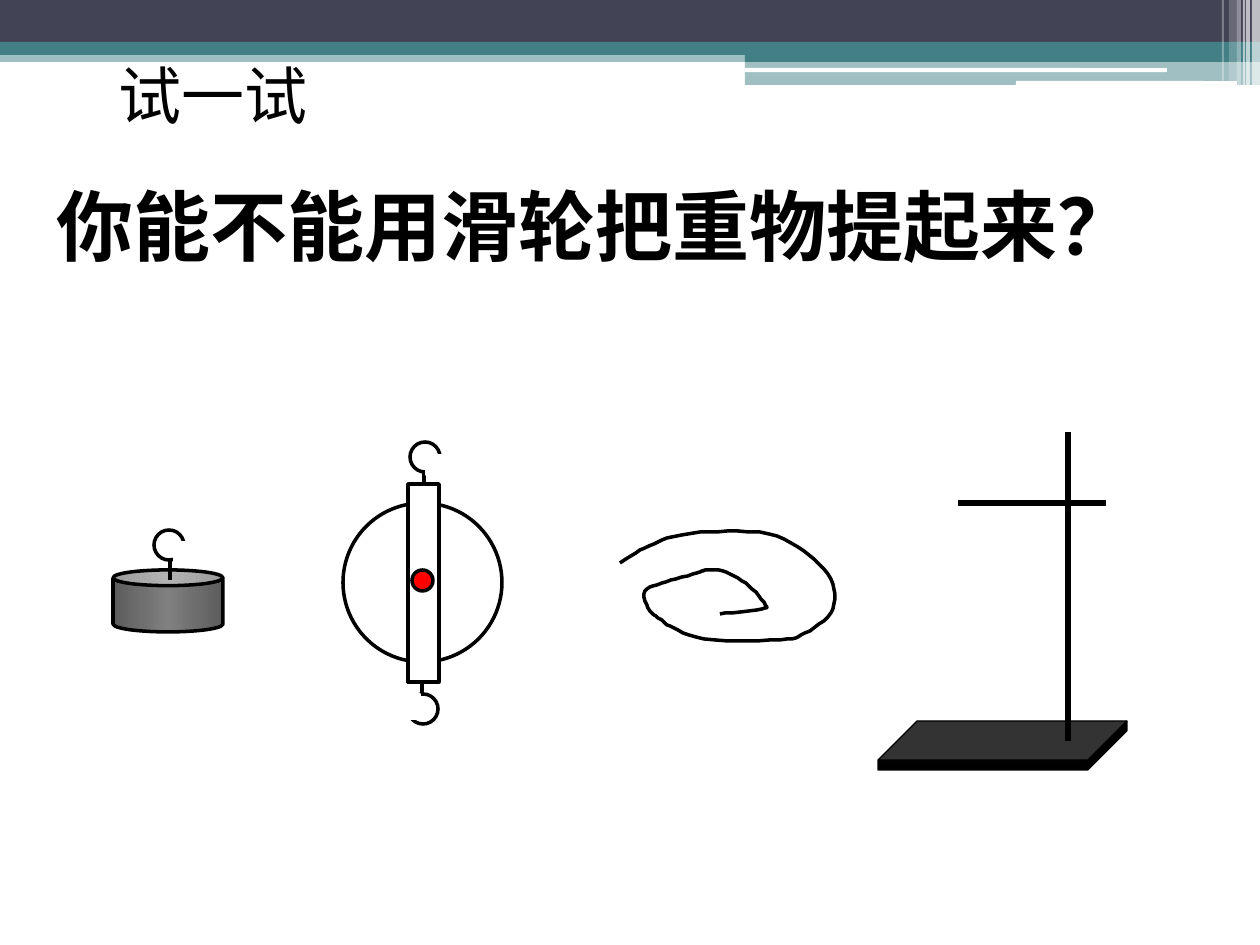
import copy

import pptx
import pptx.dml.color
import pptx.enum.dml
import pptx.enum.shapes
import pptx.enum.text
import pptx.oxml
import pptx.oxml.ns
import pptx.util

PX = 914400 // 126
COLORS = {
    "navy": "424456", "teal": "438086", "white": "FFFFFF", "black": "000000",
    "red": "FF0000", "metal_dark": "5C5C5C", "metal_light": "808080",
}
KIND = pptx.enum.shapes.MSO_SHAPE
TEXT = pptx.enum.text
qn = pptx.oxml.ns.qn


def rgb(name):
    return pptx.dml.color.RGBColor.from_string(COLORS[name])


def element(parent, tag, **attributes):
    child = parent.makeelement(qn(tag), attributes)
    parent.append(child)
    return child


def set_line(shape, color, width):
    shape.line.color.rgb = rgb(color)
    shape.line.width = pptx.util.Pt(width)


def add_part(parts, kind, box, fill, line=None, width=2, opacity=100):
    shape = parts.add_shape(kind, *(PX * length for length in box))
    shape.shadow.inherit = False
    shape.fill.solid()
    shape.fill.fore_color.rgb = rgb(fill)
    if opacity < 100:
        color = shape._element.spPr.find(qn("a:solidFill"))[0]
        element(color, "a:alpha", val=str(opacity * 1000))
    if line:
        set_line(shape, line, width)
    else:
        shape.line.fill.background()
    return shape


def add_rod(parts, x1, y1, x2, y2, width=2):
    rod = parts.add_connector(
        pptx.enum.shapes.MSO_CONNECTOR.STRAIGHT,
        *(PX * length for length in (x1, y1, x2, y2)))
    set_line(rod, "black", width)
    element(rod._element.spPr, "a:effectLst")


def add_hook(parts, x, y, stem, gap):
    """Ring at x, y with a stem (x, top, bottom) and a white gap, all relative."""
    stem_x, top, bottom = stem
    add_rod(parts, x + stem_x, y + top, x + stem_x, y + bottom)
    add_part(parts, KIND.OVAL, (x, y, 30, 30), "white", "black")
    left, top, width, height = gap
    add_part(parts, KIND.RECTANGLE, (x + left, y + top, width, height),
             "white", "white", 0.75)


def add_header(parts, x, y, width):
    right = x + width
    panel = x + 745
    bars = [
        (x, y + 50, width, 12, "teal", 50),
        (x, y, width, 42, "navy", 100),
        (x, y + 42, width, 13, "teal", 100),
        (panel, y + 49, right - panel, 13, "teal", 100),
        (panel, y + 61, right - panel, 24, "teal", 50),
    ]
    for *box, color, opacity in bars:
        add_part(parts, KIND.RECTANGLE, box, color, opacity=opacity)
    for box in ((panel, y + 68, 422, 4), (x + 1016, y + 81, 221, 5)):
        add_part(parts, KIND.ROUNDED_RECTANGLE, box, "white")
    # Stripes: distance from the right edge, width, height, opacity
    for offset, thick, tall, opacity in (
            (8, 8, 86, 65), (14, 4, 86, 65), (17, 2, 86, 60),
            (23, 4, 86, 40), (31, 8, 81, 20), (38, 2, 81, 30)):
        add_part(parts, KIND.RECTANGLE, (right - offset, y, thick, tall),
                 "white", opacity=opacity)


def fill_placeholder(holder, box, text, size, latin, bold, align, anchor, spacing):
    holder.left, holder.top, holder.width, holder.height = (PX * n for n in box)
    frame = holder.text_frame
    frame.text = text
    frame.word_wrap = True
    frame.auto_size = TEXT.MSO_AUTO_SIZE.NONE
    frame.vertical_anchor = anchor
    para = frame.paragraphs[0]
    para.alignment = align
    para.line_spacing = spacing
    para.space_before = pptx.util.Pt(0)
    properties = para._p.get_or_add_pPr()
    properties.set("marL", "0")
    properties.set("indent", "0")
    element(properties, "a:buNone")
    span = para.runs[0]
    span.font.size = pptx.util.Pt(size)
    span.font.bold = bold
    span.font.name = latin
    span.font.color.rgb = rgb("black")
    element(span._r.get_or_add_rPr(), "a:ea", typeface="Noto Sans CJK SC")


def add_weight(parts, x, y):
    can = add_part(parts, KIND.CAN, (x, y + 40, 110, 62), "metal_dark", "black")
    can.adjustments[0] = 0.254
    can.fill.gradient()
    can.fill.gradient_angle = 0
    for stop, position in zip(can.fill.gradient_stops, (0, 1)):
        stop.color.rgb = rgb("metal_dark")
        stop.position = position
    # A lighter stop in the middle
    stops = can._element.spPr.find(qn("a:gradFill")).find(qn("a:gsLst"))
    stops.insert(1, copy.deepcopy(stops[0]))
    middle = can.fill.gradient_stops[1]
    middle.color.rgb = rgb("metal_light")
    middle.position = 0.5
    add_hook(parts, x + 41, y, (16, 11, 50), (20, 12, 39, 20))


def add_pulley(page, x, y):
    parts = page.shapes.add_group_shape().shapes
    add_part(parts, KIND.OVAL, (x, y + 61, 159, 159), "white", "black")
    add_part(parts, KIND.RECTANGLE, (x + 65, y + 42, 31, 198), "white", "black")
    add_part(parts, KIND.OVAL, (x + 69, y + 128, 21, 21), "red", "black")
    add_hook(parts, x + 67, y, (14, 20, 41), (16, 13, 39, 20))
    add_hook(parts, x + 65, y + 252, (14, -14, 17), (-27, 0, 39, 25))


def smooth_curve(points, steps=6):
    """Catmull-Rom curve through the points."""
    padded = [points[0], *points, points[-1]]
    curve = [points[0]]
    for a, b, c, d in zip(padded, padded[1:], padded[2:], padded[3:]):
        for step in range(1, steps + 1):
            t = step / steps
            curve.append(tuple(
                (2 * q + (r - p) * t + (2 * p - 5 * q + 4 * r - s) * t ** 2
                 + (3 * q - p - 3 * r + s) * t ** 3) / 2
                for p, q, r, s in zip(a, b, c, d)))
    return curve


def add_rope(parts, x, y):
    knots = [(0, 31), (25, 16), (52, 5), (88, 0), (149, 2), (189, 23),
             (213, 52), (211, 81), (185, 101), (160, 108), (84, 107),
             (50, 94), (42, 88), (30, 79), (25, 59), (46, 50), (77, 41),
             (88, 38), (106, 40), (129, 54), (145, 72), (142, 77), (100, 82)]
    start, *rest = [(x + a, y + b) for a, b in smooth_curve(knots)]
    builder = parts.build_freeform(*start, scale=PX)
    builder.add_line_segments(rest, close=False)
    rope = builder.convert_to_shape()
    rope.shadow.inherit = False
    rope.fill.background()
    set_line(rope, "black", 2)


def add_stand(parts, x, y):
    add_rod(parts, x + 80, y + 71, x + 228, y + 71, 3)
    base = add_part(parts, KIND.CUBE, (x, y + 289, 249, 49), "black", "black", 0.75)
    base.adjustments[0] = 0.799
    add_rod(parts, x + 190, y, x + 190, y + 309, 3)


def main():
    deck = pptx.Presentation()
    deck.slide_width = PX * 1260
    deck.slide_height = PX * 945
    page = deck.slides.add_slide(deck.slide_layouts[1])

    # Title and question
    title, question = page.placeholders
    fill_placeholder(title, (54, 45, 318, 99), "试一试", 36, "Noto Sans CJK SC",
                     False, TEXT.PP_ALIGN.CENTER, TEXT.MSO_ANCHOR.MIDDLE, 1.0)
    fill_placeholder(question, (44, 145, 1216, 253), "你能不能用滑轮把重物提起来？",
                     44, "Arial", True, TEXT.PP_ALIGN.LEFT,
                     TEXT.MSO_ANCHOR.TOP, 1.3)

    # Header band
    add_header(page.shapes, 0, 0, 1260)

    # Equipment
    add_pulley(page, 343, 442)
    add_stand(page.shapes, 878, 432)
    add_weight(page.shapes, 113, 530)
    add_rope(page.shapes, 620, 532)

    deck.save("out.pptx")


if __name__ == "__main__":
    main()
